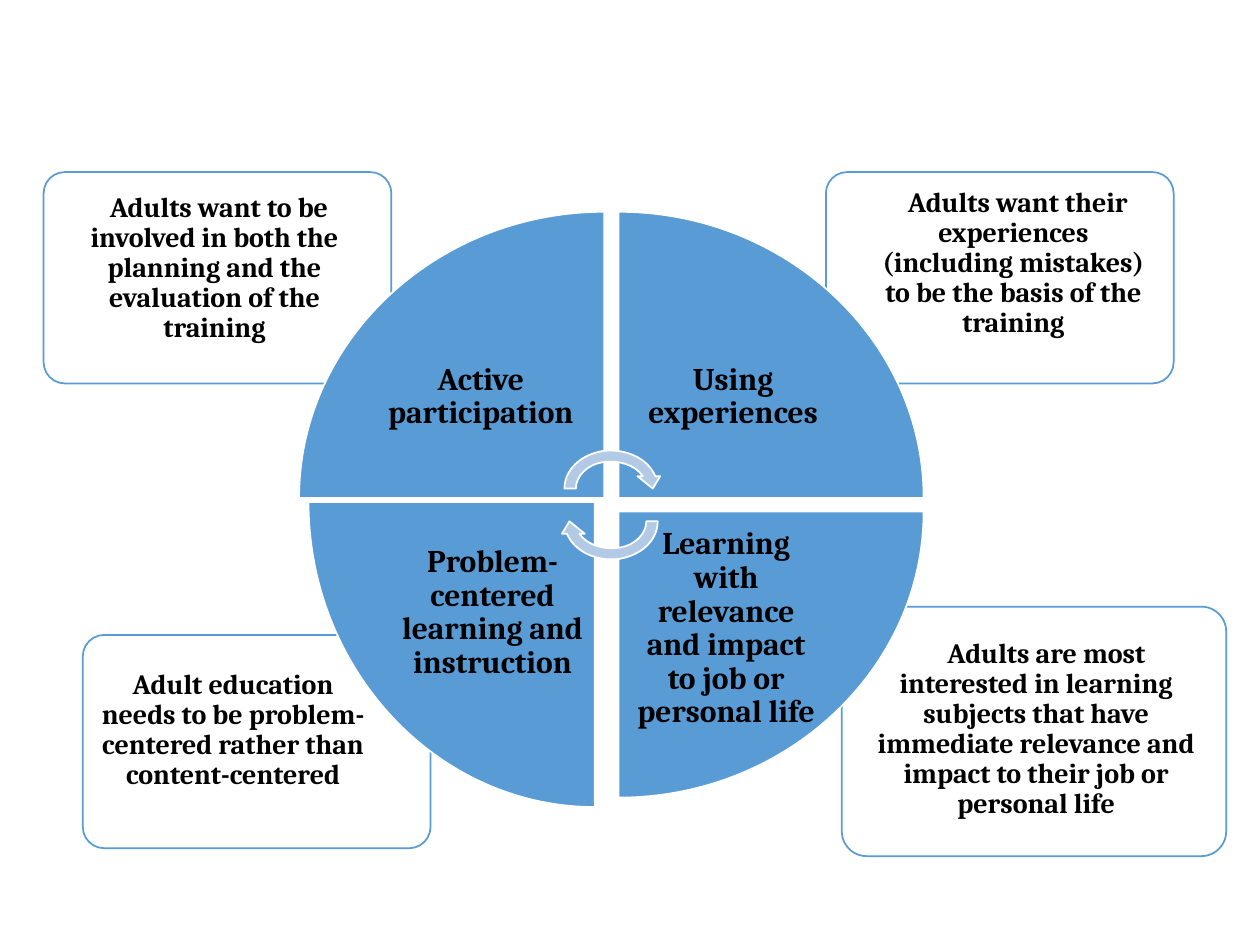
from pptx import Presentation
from pptx.dml.color import RGBColor as Rgb
from pptx.enum.shapes import MSO_SHAPE as Kind
from pptx.enum.text import MSO_ANCHOR as Anchor, PP_ALIGN as Align
from pptx.oxml.ns import qn
from pptx.oxml.xmlchemy import OxmlElement as Node
from pptx.util import Cm, Pt

HUES = {"blue": "599BD5", "pale": "B3CAE7", "white": "FFFFFF", "ink": "000000"}
FONT = "Cambria"
BEND = 0.55  # control length of a quarter ellipse

# Cards: frame, text box, left margin and first-line indent, wording
CARDS = [
    ((16.97, 12.23, 7.75, 5.03), (17.41, 12.8, 6.81, 4.32), (0.15, 0.41),
     "Adults are most interested in learning subjects that have "
     "immediate relevance and impact to their job or personal life"),
    ((1.67, 12.8, 7.01, 4.3), (1.73, 13.42, 5.79, 2.77), (0.15, 0),
     "Adult education needs to be problem-centered rather than content-centered"),
    ((16.65, 3.47, 7.01, 4.26), (17.42, 3.71, 5.87, 3), (0.15, 0.18),
     "Adults want their experiences (including mistakes) "
     "to be the basis of the training"),
    ((0.88, 3.47, 7.01, 4.26), (1.28, 3.81, 5.94, 3.45), (0.15, 0.18),
     "Adults want to be involved in both the planning "
     "and the evaluation of the training"),
]

# Wedges: inner corner, signed reach, text box, wording
WEDGES = [
    ((12.18, 10.04), (-6.15, -5.77), (7.22, 5.96, 4.95, 4.09),
     "Active participation"),
    ((12.47, 10.04), (6.15, -5.77), (12.47, 5.96, 4.62, 4.09),
     "Using experiences"),
    ((12.47, 10.31), (6.15, 5.77), (12.47, 10.3, 4.34, 4.75),
     "Learning with relevance and impact to job or personal life"),
    ((11.99, 10.12), (-5.77, 6.15), (7.67, 10.31, 4.52, 4.09),
     "Problem-centered learning and instruction"),
]

# Arrow outline around the hub: a step holds one point (line) or three (curve)
HUB = (12.32, 10.18)
ARROW = [
    [(-0.94, -0.33)],
    [(-0.94, -0.71), (-0.61, -1.02), (-0.15, -1.09)],
    [(0.3, -1.14), (0.74, -0.94), (0.89, -0.58)],
    [(0.99, -0.58)], [(0.84, -0.33)], [(0.53, -0.58)], [(0.64, -0.58)],
    [(0.48, -0.81), (0.15, -0.91), (-0.18, -0.86)],
    [(-0.48, -0.81), (-0.71, -0.58), (-0.71, -0.33)],
]


def paint(shape, fill, line):
    shape.shadow.inherit = False
    shape.fill.solid()
    shape.fill.fore_color.rgb = Rgb.from_string(HUES[fill])
    shape.line.color.rgb = Rgb.from_string(HUES[line])
    shape.line.width = Pt(1)


def add_path(slide, mid, size, steps, fill):
    """Draw steps, scaled by size and moved to mid."""
    spots = [(Cm(mid[0] + size[0] * x), Cm(mid[1] + size[1] * y))
             for step in steps for x, y in step]
    pen = slide.shapes.build_freeform(*spots[0])
    pen.add_line_segments(spots[1:], close=True)
    shape = pen.convert_to_shape()
    # Join each group of three lines into one curve
    lines = iter(list(shape._element.iter(qn("a:lnTo"))))
    for step in steps[1:]:
        group = [next(lines) for _ in step]
        if len(group) == 3:
            curve = Node("a:cubicBezTo")
            group[0].addprevious(curve)
            for line in group:
                curve.append(line[0])
                line.getparent().remove(line)
    paint(shape, fill, "white")


def add_text(slide, area, text, size, inset, anchor, indent=(0, 0)):
    frame = slide.shapes.add_textbox(*map(Cm, area)).text_frame
    frame.word_wrap = True
    frame.vertical_anchor = anchor
    frame.margin_left = frame.margin_right = Cm(inset)
    frame.margin_top = frame.margin_bottom = Cm(inset)
    para = frame.paragraphs[0]
    para.alignment = Align.CENTER
    para.line_spacing = 0.89
    props = para._p.get_or_add_pPr()
    for name, value in zip(("marL", "indent"), indent):
        props.set(name, str(Cm(value)))
    run = para.add_run()
    run.text = text
    run.font.name = FONT
    run.font.size = Pt(size)
    run.font.bold = True
    run.font.color.rgb = Rgb.from_string(HUES["ink"])


def add_card(slide, frame, area, indent, text):
    card = slide.shapes.add_shape(Kind.ROUNDED_RECTANGLE, *map(Cm, frame))
    card.adjustments[0] = 0.1
    paint(card, "white", "blue")
    add_text(slide, area, text, 16, 0.1, Anchor.TOP, indent)


def add_wedge(slide, mid, reach, area, text):
    steps = [[(1, 0)], [(1, BEND), (BEND, 1), (0, 1)], [(0, 0)]]
    add_path(slide, mid, reach, steps, "blue")
    add_text(slide, area, text, 18, 0.28, Anchor.MIDDLE)


def main():
    deck = Presentation()
    deck.slide_width, deck.slide_height = Cm(25.4), Cm(19.05)
    slide = deck.slides.add_slide(deck.slide_layouts[6])

    # Explanations in the corners
    for card in CARDS:
        add_card(slide, *card)

    # Four principles
    for wedge in WEDGES:
        add_wedge(slide, *wedge)

    # Cycle arrows in the centre, the second turned half round
    for turn in (1, -1):
        add_path(slide, HUB, (turn, turn), ARROW, "pale")

    deck.save("out.pptx")


if __name__ == "__main__":
    main()
